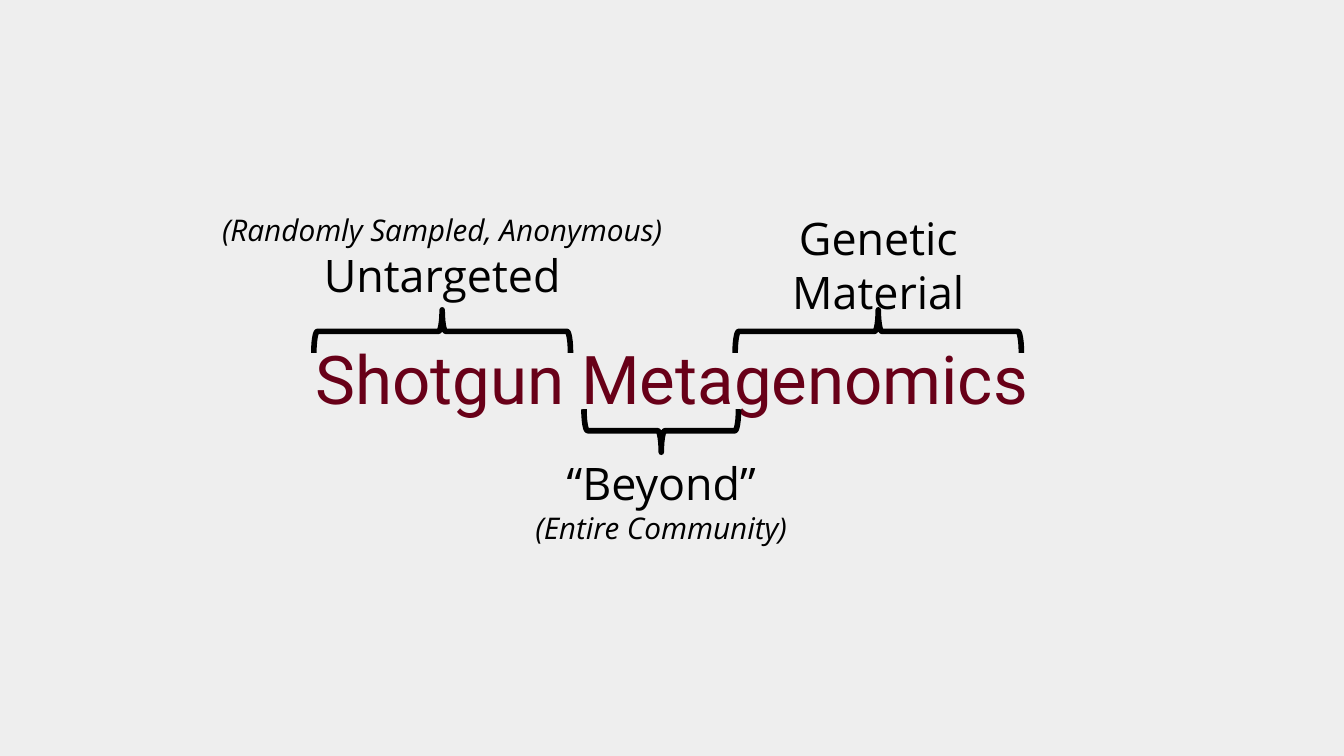
import pptx
import pptx.dml.color
import pptx.enum.shapes
import pptx.enum.text
import pptx.util

PX = 914400 // 200  # 200 px to the inch
BRACE_DEPTH = 64
ALIGN = pptx.enum.text.PP_ALIGN
ANCHOR = pptx.enum.text.MSO_ANCHOR

# Each line of a label is (text, points, italic).
# Annotations: box, brace span, label height, label above the brace, anchor, lines
ANNOTATIONS = [
    ((296, 304, 724, 221), 382, 154, True, ANCHOR.BOTTOM,
     [("(Randomly Sampled, Anonymous)", 16, True), ("Untargeted", 24, False)]),
    ((770, 609, 428, 213), 230, 154, False, ANCHOR.TOP,
     [("“Beyond”", 24, False), ("(Entire Community)", 16, True)]),
    ((1042, 304, 530, 221), 426, 100, True, ANCHOR.TOP,
     [("Genetic Material", 24, False)]),
]


def color(value):
    return pptx.dml.color.RGBColor.from_string(value)


def emu(*lengths):
    return [pptx.util.Emu(round(length * PX)) for length in lengths]


def style_paragraph(para, font_name, points, hex_color, italic=False):
    para.alignment = ALIGN.CENTER
    para.line_spacing = 1.0
    para.space_before = pptx.util.Pt(0)
    para.font.name = font_name
    para.font.size = pptx.util.Pt(points)
    para.font.italic = italic
    para.font.color.rgb = color(hex_color)


def set_frame(frame, anchor, side, end):
    frame.word_wrap = True
    frame.auto_size = pptx.enum.text.MSO_AUTO_SIZE.NONE
    frame.vertical_anchor = anchor
    frame.margin_left, frame.margin_right = emu(side, side)
    frame.margin_top, frame.margin_bottom = emu(end, end)


def fill_title(page, box):
    title = page.shapes.title
    title.left, title.top, title.width, title.height = emu(*box)
    set_frame(title.text_frame, ANCHOR.MIDDLE, 20, 20)
    title.text_frame.text = "Shotgun Metagenomics"
    style_paragraph(title.text_frame.paragraphs[0], "Roboto", 36, "680018")


def add_brace(group, center_x, center_y, span, points_up):
    # The preset points right, so it is turned about its centre
    brace = group.shapes.add_shape(
        pptx.enum.shapes.MSO_SHAPE.RIGHT_BRACE,
        *emu(center_x - BRACE_DEPTH / 2, center_y - span / 2, BRACE_DEPTH, span))
    brace.rotation = 270 if points_up else 90
    brace.shadow.inherit = False
    brace.fill.background()
    brace.line.color.rgb = color("000000")
    brace.line.width = pptx.util.Pt(3)


def add_label(group, box, anchor, lines):
    frame = group.shapes.add_textbox(*emu(*box)).text_frame
    set_frame(frame, anchor, 20, 10)
    frame.text = "\n".join(text for text, _, _ in lines)
    for para, (_, points, italic) in zip(frame.paragraphs, lines):
        style_paragraph(para, "Open Sans", points, "000000", italic)


def add_annotation(page, box, span, label_height, label_above, anchor, lines):
    left, top, width, height = box
    group = page.shapes.add_group_shape()
    half = BRACE_DEPTH / 2
    brace_y = top + height - half if label_above else top + half
    label_top = top if label_above else top + height - label_height
    add_brace(group, left + width / 2, brace_y, span, label_above)
    add_label(group, (left, label_top, width, label_height), anchor, lines)


def main():
    deck = pptx.Presentation()
    deck.slide_width, deck.slide_height = emu(2000, 1125)
    page = deck.slides.add_slide(deck.slide_layouts.get_by_name("Title Only"))
    page.background.fill.solid()
    page.background.fill.fore_color.rgb = color("EEEEEE")

    fill_title(page, (68, 470, 1864, 184))
    for annotation in ANNOTATIONS:
        add_annotation(page, *annotation)
    deck.save("out.pptx")


if __name__ == "__main__":
    main()
